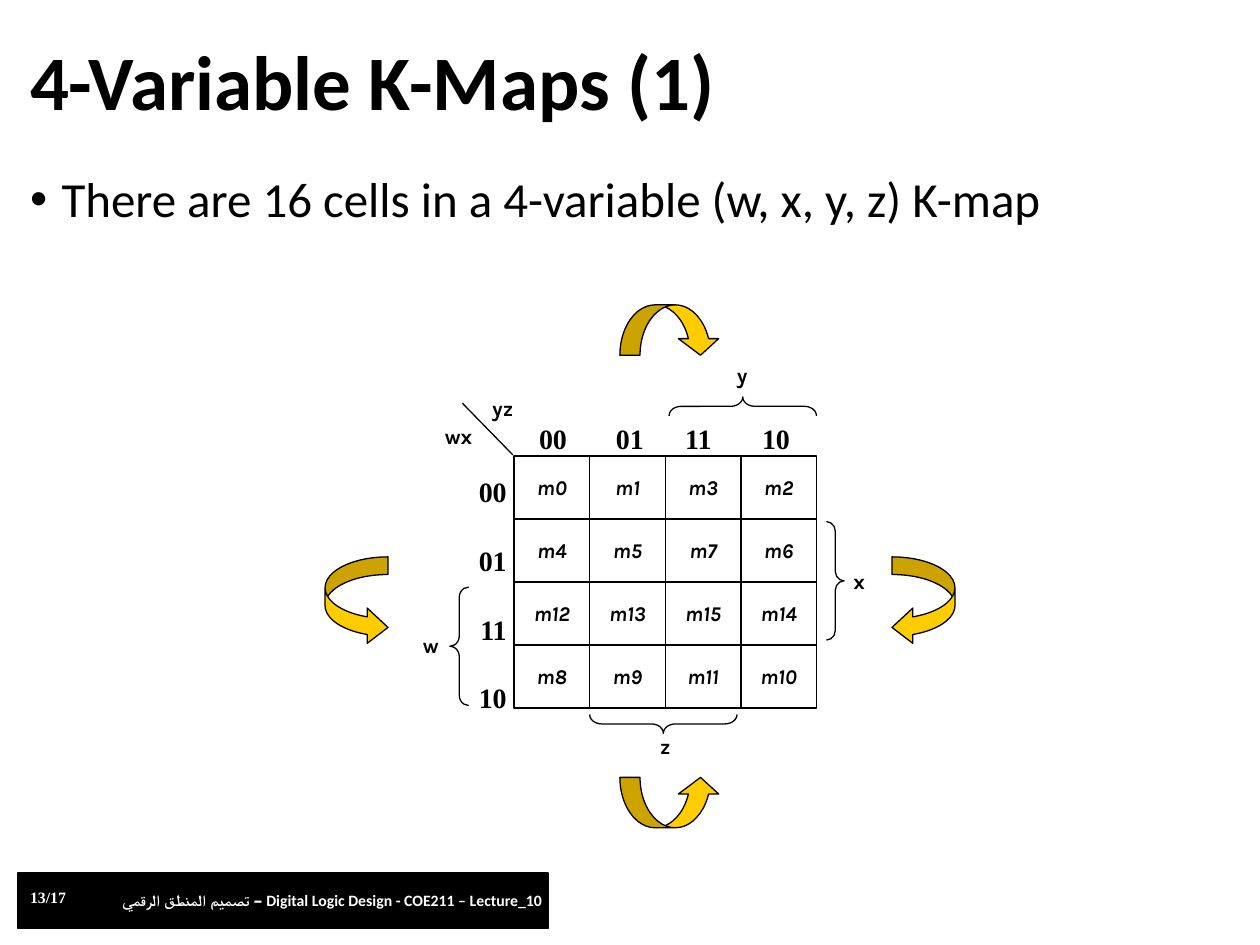
from lxml import etree
from pptx import Presentation
from pptx import util as u
from pptx.dml.color import RGBColor
from pptx.enum import shapes, text
from pptx.oxml import ns

BLACK = RGBColor(0x00, 0x00, 0x00)
WHITE = RGBColor(0xFF, 0xFF, 0xFF)
GOLD = RGBColor(0xFF, 0xCC, 0x00)

SANS, SERIF, LABEL = "Calibri", "Times New Roman", "Karla"
LEFT, CENTER, RIGHT = text.PP_ALIGN.LEFT, text.PP_ALIGN.CENTER, text.PP_ALIGN.RIGHT
SHAPE = shapes.MSO_SHAPE

MAP_LEFT, MAP_TOP = 40.8, 36.2
CELL_WIDTH, CELL_HEIGHT = 6, 5
MINTERMS = [[0, 1, 3, 2], [4, 5, 7, 6], [12, 13, 15, 14], [8, 9, 11, 10]]
GRAY_CODES = ["00", "01", "11", "10"]
HEADER_TABS = [0.61, 1.16, 1.77]


class SlideBuilder:
    COLUMNS, ROWS = 100, 75

    def __init__(self, presentation):
        self.column = presentation.slide_width / self.COLUMNS
        self.row = presentation.slide_height / self.ROWS
        self.slide = presentation.slides.add_slide(presentation.slide_layouts[6])

    def grid(self, *lengths):
        units = (self.column, self.row, self.column, self.row)
        return [u.Emu(round(length * unit)) for length, unit in zip(lengths, units)]

    def label(self, box, lines, size, font, color=BLACK, align=LEFT, bold=True,
              italic=False, anchor=text.MSO_ANCHOR.TOP, leading=None, before=0,
              bullet=False, tabs=()):
        frame = self.slide.shapes.add_textbox(*self.grid(*box)).text_frame
        frame.word_wrap = True
        frame.vertical_anchor = anchor
        frame.text = lines
        for index, paragraph in enumerate(frame.paragraphs):
            properties = paragraph._p.get_or_add_pPr()
            if bullet:
                properties.set("marL", str(u.Inches(0.25)))
                properties.set("indent", str(-u.Inches(0.25)))
                etree.SubElement(properties, ns.qn("a:buFont"), typeface="Arial")
                etree.SubElement(properties, ns.qn("a:buChar"), char="•")
            if tabs:
                stops = etree.SubElement(properties, ns.qn("a:tabLst"))
                for position in tabs:
                    etree.SubElement(stops, ns.qn("a:tab"),
                                     pos=str(u.Inches(position)), algn="l")
            paragraph.alignment = align
            if leading:
                paragraph.line_spacing = leading
            if before and index:
                paragraph.space_before = u.Pt(before)
            paragraph.font.name = font
            paragraph.font.size = u.Pt(size)
            paragraph.font.bold = bold
            paragraph.font.italic = italic
            paragraph.font.color.rgb = color

    def shape(self, kind, box, fill=None, adjustments=(), rotation=0, flip=None, width=0.75):
        shape = self.slide.shapes.add_shape(kind, *self.grid(*box))
        shape.shadow.inherit = False
        if fill is None:
            shape.fill.background()
        else:
            shape.fill.solid()
            shape.fill.fore_color.rgb = fill
        shape.line.color.rgb = BLACK
        shape.line.width = u.Pt(width)
        for index, value in enumerate(adjustments):
            shape.adjustments[index] = value
        shape.rotation = rotation
        if flip:
            shape._element.spPr.find(ns.qn("a:xfrm")).set(flip, "1")
        return shape

    def line(self, *ends):
        connector = self.slide.shapes.add_connector(
            shapes.MSO_CONNECTOR.STRAIGHT, *self.grid(*ends))
        connector.line.color.rgb = BLACK
        connector.line.width = u.Pt(0.75)
        etree.SubElement(connector._element.spPr, ns.qn("a:effectLst"))
        return connector


def draw_map(builder):
    width, height = 4 * CELL_WIDTH, 4 * CELL_HEIGHT
    right, bottom = MAP_LEFT + width, MAP_TOP + height
    border = builder.shape(SHAPE.RECTANGLE, (MAP_LEFT, MAP_TOP, width, height))
    for index in range(1, 4):
        x = MAP_LEFT + index * CELL_WIDTH
        y = MAP_TOP + index * CELL_HEIGHT
        vertical = builder.line(x, MAP_TOP, x, bottom)
        horizontal = builder.line(MAP_LEFT, y, right, y)
        if index == 2:
            vertical.begin_connect(border, 0)
            vertical.end_connect(border, 2)
            horizontal.begin_connect(border, 1)
            horizontal.end_connect(border, 3)
    for row, minterms in enumerate(MINTERMS):
        for column, minterm in enumerate(minterms):
            box = (MAP_LEFT + column * CELL_WIDTH, MAP_TOP + 1 + row * CELL_HEIGHT,
                   CELL_WIDTH, CELL_HEIGHT - 1)
            builder.label(box, f"m{minterm}", 12, LABEL, align=CENTER, italic=True)


def draw_headers(builder):
    builder.label((41.8, 33, 22.4, 4), "\t".join(GRAY_CODES), 16, SERIF, tabs=HEADER_TABS)
    builder.label((36.8, 37.2, 4.4, 20.7), "\n".join(GRAY_CODES), 16, SERIF,
                  align=RIGHT, before=20)
    builder.line(40.7, 36.1, 36.7, 32)
    for name, box in [
        ("w", (32, 49.7, 4.4, 4)),
        ("x", (66, 44.6, 4.4, 4)),
        ("y", (56.7, 28.3, 4.4, 3.2)),
        ("z", (50.6, 57.7, 4.4, 3)),
        ("wx", (33.8, 33.1, 5.2, 3.6)),
        ("yz", (37.3, 30.9, 5.2, 3.2)),
    ]:
        builder.label(box, name, 12, LABEL, align=CENTER)


def draw_braces_and_arrows(builder):
    for box, depth, rotation, flip in [
        ((35.7, 46.6, 1.5, 9.4), 0.54, 0, None),
        ((65.6, 41.4, 1.4, 9.4), 0.54, 0, "flipH"),
        ((58.2, 26.4, 1.5, 11.7), 0.63, 90, None),
        ((51.9, 51.6, 1.5, 11.7), 0.63, 270, None),
    ]:
        builder.shape(SHAPE.LEFT_BRACE, box, None, (depth, 0.5), rotation, flip)
    sideways, upright = (0.28, 0.56, 0.33), (0.4, 0.8, 0.33)
    for kind, box, adjustments, flip in [
        (SHAPE.CURVED_RIGHT_ARROW, (25.8, 44.2, 5, 7), sideways, None),
        (SHAPE.CURVED_RIGHT_ARROW, (70.8, 44.2, 5, 7), sideways, "flipH"),
        (SHAPE.CURVED_UP_ARROW, (49.2, 61.7, 8, 4), upright, None),
        (SHAPE.CURVED_UP_ARROW, (49.2, 24.2, 8, 4), upright, "flipV"),
    ]:
        builder.shape(kind, box, GOLD, adjustments, flip=flip)


def main():
    presentation = Presentation()
    presentation.slide_width = u.Inches(10)
    presentation.slide_height = u.Inches(7.5)
    builder = SlideBuilder(presentation)
    builder.shape(SHAPE.RECTANGLE, (1.4, 69.3, 42.1, 4.4), BLACK, width=1)
    builder.label((1.4, 70, 5.5, 2.5), "13/17", 9, SERIF, WHITE)
    builder.label((8.7, 70.2, 37.2, 2.5),
                  "تصميم المنطق الرقمي – Digital Logic Design - COE211 – Lecture_10",
                  9, SANS, WHITE)
    builder.label((1.4, 2.5, 97.4, 8.5), "4-Variable K-Maps (1)", 44, SANS,
                  anchor=text.MSO_ANCHOR.MIDDLE, leading=0.9)
    builder.label((1.4, 13.4, 97.4, 54.1),
                  "There are 16 cells in a 4-variable (w, x, y, z) K-map",
                  28, SANS, bold=False, leading=0.9, bullet=True)
    draw_map(builder)
    draw_headers(builder)
    draw_braces_and_arrows(builder)
    presentation.save("out.pptx")


if __name__ == "__main__":
    main()
